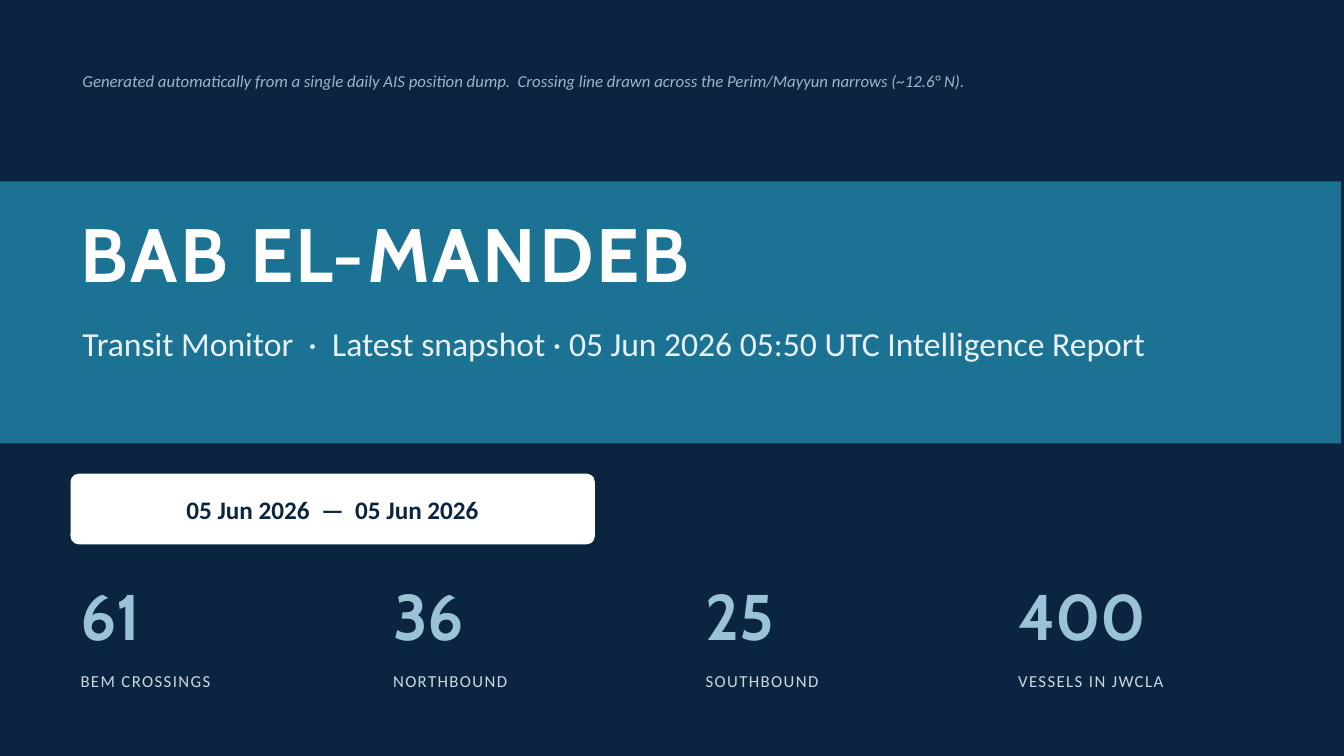
from pptx import Presentation
from pptx.dml.color import RGBColor
from pptx.enum.shapes import MSO_SHAPE
from pptx.enum.text import MSO_ANCHOR, PP_ALIGN
from pptx.util import Inches, Pt

HUES = {
    "navy": "0B2440",
    "teal": "1C7293",
    "white": "FFFFFF",
    "ice": "E8F1F5",
    "sky": "9AC4D6",
    "mist": "C9D9E2",
    "slate": "9FB6C4",
}
HEAD, BODY = "Cabin", "Calibri"
CELL = 0.1  # inches per grid column and row

STATS = [
    ("61", "BEM CROSSINGS"),
    ("36", "NORTHBOUND"),
    ("25", "SOUTHBOUND"),
    ("400", "VESSELS IN JWCLA"),
]


def hue(name):
    return RGBColor.from_string(HUES[name])


class Deck:
    def __init__(self, wide, high):
        self.file = Presentation()
        self.file.slide_width = Inches(wide)
        self.file.slide_height = Inches(high)

    def page(self, back):
        self.slide = self.file.slides.add_slide(self.file.slide_layouts[6])
        fill = self.slide.background.fill
        fill.solid()
        fill.fore_color.rgb = hue(back)

    def grid(self, *cells):
        return [Inches(round(n * CELL, 2)) for n in cells]

    def label(self, shape, text, size, color, font=BODY, bold=False,
              ital=False, track=0, align=PP_ALIGN.LEFT):
        """Fill a shape with one styled line; track is letter spacing in points."""
        frame = shape.text_frame
        frame.text = text
        frame.word_wrap = True
        frame.vertical_anchor = MSO_ANCHOR.MIDDLE
        line = frame.paragraphs[0]
        line.alignment = align
        for run in line.runs:
            run.font.name = font
            run.font.size = Pt(size)
            run.font.bold = bold
            run.font.italic = ital
            run.font.color.rgb = hue(color)
            if track:
                run.font._element.set("spc", str(track * 100))

    def text(self, box, text, size, color, **style):
        shape = self.slide.shapes.add_textbox(*self.grid(*box))
        self.label(shape, text, size, color, **style)

    def block(self, box, color, kind=MSO_SHAPE.RECTANGLE):
        shape = self.slide.shapes.add_shape(kind, *self.grid(*box))
        shape.shadow.inherit = False
        shape.fill.solid()
        shape.fill.fore_color.rgb = hue(color)
        shape.line.fill.background()
        return shape

    def pill(self, box, text, size, color, fill):
        shape = self.block(box, fill, MSO_SHAPE.ROUNDED_RECTANGLE)
        shape.adjustments[0] = 0.114
        self.label(shape, text, size, color, bold=True, align=PP_ALIGN.CENTER)

    def stat(self, left, count, name):
        self.text((left, 56.5, 28.5, 9), count, 46, "sky", font=HEAD, bold=True)
        self.text((left, 65.5, 28.5, 4), name, 12, "mist", track=1)


def main():
    deck = Deck(13.33, 7.5)
    deck.page("navy")
    deck.block((0, 18, 133, 26), "teal")
    deck.text((7, 19.5, 119, 11), "BAB EL-MANDEB", 54, "white",
              font=HEAD, bold=True, track=2)
    deck.text((7.2, 30.5, 119, 7),
              "Transit Monitor  ·  Latest snapshot · 05 Jun 2026 05:50 UTC "
              "Intelligence Report", 24, "ice")
    deck.pill((7, 47, 52, 7), "05 Jun 2026  —  05 Jun 2026", 18, "navy", "white")
    for i, (count, name) in enumerate(STATS):
        deck.stat(7 + 31 * i, count, name)
    deck.text((7.2, 5.5, 119, 5),
              "Generated automatically from a single daily AIS position dump.  "
              "Crossing line drawn across the Perim/Mayyun narrows (~12.6° N).",
              12, "slate", ital=True)
    deck.file.save("out.pptx")


if __name__ == "__main__":
    main()
